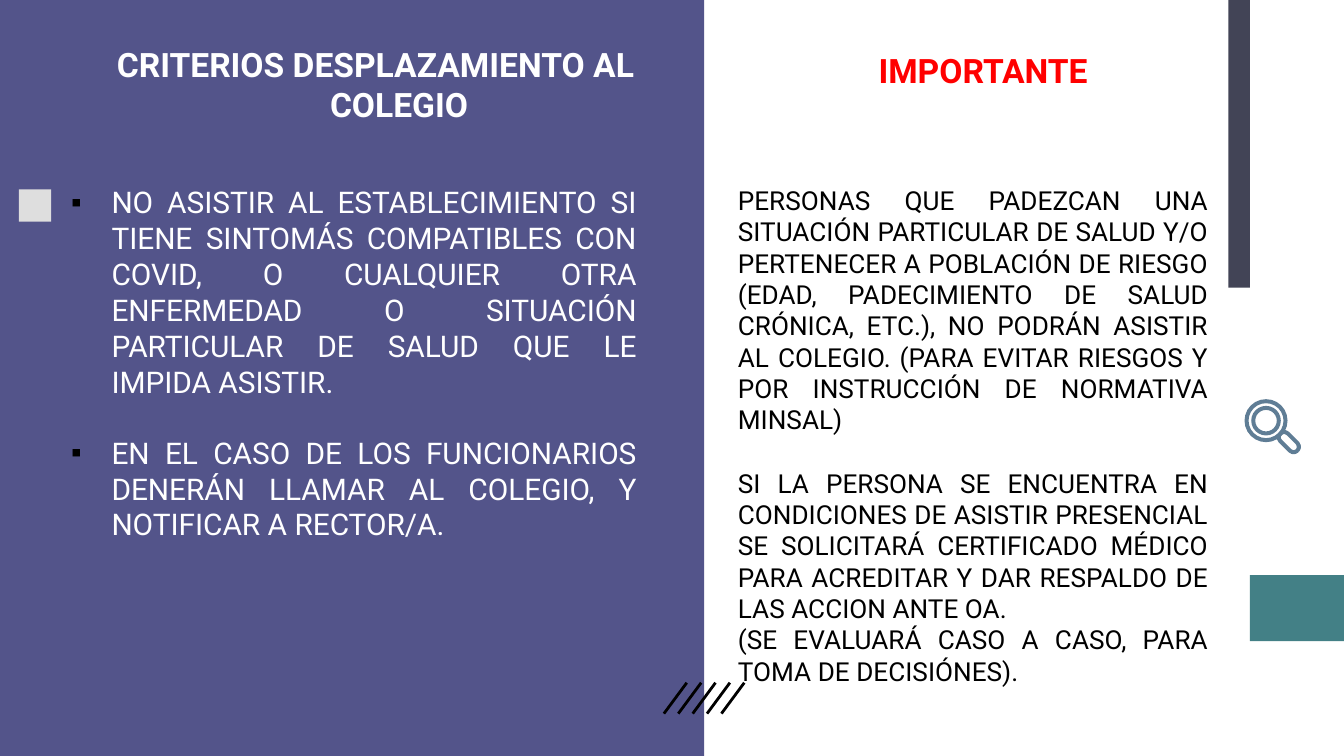
from lxml.etree import SubElement
from pptx import Presentation
from pptx.dml.color import RGBColor
from pptx.enum.shapes import MSO_CONNECTOR, MSO_SHAPE as SHAPE
from pptx.enum.text import MSO_ANCHOR as ANCHOR, MSO_AUTO_SIZE, PP_ALIGN as ALIGN
from pptx.oxml.ns import qn
from pptx.util import Inches, Pt

WIDTH = 10
HEIGHT = WIDTH * 9 / 16
FONT = "Roboto"
WHITE, BLACK, RED = "FFFFFF", "000000", "FF0000"
PURPLE, SLATE, TEAL, GRAY, STEEL = "53548A", "424456", "438086", "DEDEDE", "5F7D95"

CRITERIA = [
    "NO ASISTIR AL ESTABLECIMIENTO SI TIENE SINTOMÁS COMPATIBLES CON COVID, "
    "O CUALQUIER OTRA ENFERMEDAD O SITUACIÓN PARTICULAR DE SALUD QUE LE IMPIDA ASISTIR.",
    "EN EL CASO DE LOS FUNCIONARIOS DENERÁN LLAMAR AL COLEGIO, Y NOTIFICAR A RECTOR/A.",
]
IMPORTANT = [
    "PERSONAS QUE PADEZCAN UNA SITUACIÓN PARTICULAR DE SALUD Y/O PERTENECER A "
    "POBLACIÓN DE RIESGO (EDAD, PADECIMIENTO DE SALUD CRÓNICA, ETC.), NO PODRÁN "
    "ASISTIR AL COLEGIO. (PARA EVITAR RIESGOS Y POR INSTRUCCIÓN DE NORMATIVA MINSAL)",
    "SI LA PERSONA SE ENCUENTRA EN CONDICIONES DE ASISTIR PRESENCIAL SE SOLICITARÁ "
    "CERTIFICADO MÉDICO PARA ACREDITAR Y DAR RESPALDO DE LAS ACCION ANTE OA.",
    "(SE EVALUARÁ CASO A CASO, PARA TOMA DE DECISIÓNES).",
]


def rgb(value):
    return RGBColor.from_string(value)


def place(sp, x, y, w, h):
    """Position a shape and bring it to the front."""
    sp.left, sp.top, sp.width, sp.height = (Inches(v) for v in (x, y, w, h))
    sp.element.getparent().append(sp.element)


def set_bullet(p, char, color):
    pPr = p._p.get_or_add_pPr()
    if not char:
        SubElement(pPr, qn("a:buNone"))
        return
    clr = SubElement(pPr, qn("a:buClr"))
    SubElement(clr, qn("a:srgbClr"), val=color)
    SubElement(pPr, qn("a:buChar"), char=char)


def write(sp, paragraphs, size, color, bold=False, align=ALIGN.JUSTIFY,
          anchor=ANCHOR.TOP, inset=0.05, margin=0, indent=0, bullet=None, gaps=()):
    """Fill a shape with paragraphs; gaps gives points before each one."""
    tf = sp.text_frame
    tf.word_wrap = True
    tf.auto_size = MSO_AUTO_SIZE.NONE
    tf.vertical_anchor = anchor
    tf.margin_left = tf.margin_right = Inches(0.1)
    tf.margin_top = tf.margin_bottom = Inches(inset)
    for i, text in enumerate(paragraphs):
        p = tf.add_paragraph() if i else tf.paragraphs[0]
        p.alignment = align
        p.space_before = Pt(gaps[i] if gaps else 0)
        pPr = p._p.get_or_add_pPr()
        pPr.set("marL", str(Inches(margin)))
        pPr.set("indent", str(Inches(indent)))
        set_bullet(p, bullet, BLACK)
        r = p.add_run()
        r.text = text
        r.font.name, r.font.size, r.font.bold = FONT, Pt(size), bold
        r.font.color.rgb = rgb(color)


def add_heading(sp, text, color):
    write(sp, [text], 18, color, bold=True, align=ALIGN.CENTER,
          anchor=ANCHOR.MIDDLE, inset=0.1, margin=0.5, indent=-0.35)


def add_block(slide, kind, x, y, w, h, color):
    sp = slide.shapes.add_shape(kind, Inches(x), Inches(y), Inches(w), Inches(h))
    sp.shadow.inherit = False
    sp.fill.solid()
    sp.fill.fore_color.rgb = rgb(color)
    sp.line.fill.background()
    return sp


def add_hatch(slide, count=5, step=0.107):
    for i in range(count):
        x = 5.11 + i * step
        line = slide.shapes.add_connector(
            MSO_CONNECTOR.STRAIGHT, Inches(x), Inches(5.08), Inches(x - 0.17), Inches(5.31))
        line.line.color.rgb = rgb(BLACK)
        line.line.width = Pt(1.5)
        SubElement(line.element.spPr, qn("a:effectLst"))


def add_magnifier(slide, cx=9.42, cy=3.13, band=0.03):
    handle = add_block(slide, SHAPE.ROUNDED_RECTANGLE, cx + 0.08, cy + 0.12, 0.18, 0.08, STEEL)
    handle.adjustments[0] = 0.5
    handle.rotation = 45
    handle.fill.background()
    handle.line.color.rgb = rgb(STEEL)
    handle.line.width = Inches(band)
    for radius in (0.16, 0.11):
        ring = add_block(slide, SHAPE.DONUT, cx - radius, cy - radius,
                         2 * radius, 2 * radius, STEEL)
        ring.adjustments[0] = band / (2 * radius)


def main():
    prs = Presentation()
    prs.slide_width, prs.slide_height = Inches(WIDTH), Inches(HEIGHT)
    slide = prs.slides.add_slide(prs.slide_layouts[3])
    title, criteria, important = slide.placeholders

    for box, color in [((0, 0, 5.24, HEIGHT), PURPLE), ((9.14, 0, 0.16, 2.14), SLATE),
                       ((9.3, 4.28, 0.7, 0.49), TEAL), ((0.14, 1.41, 0.24, 0.24), GRAY)]:
        add_block(slide, SHAPE.RECTANGLE, *box, color)
    add_hatch(slide)

    place(title, 0.51, 0.21, 4.42, 0.83)
    add_heading(title, "CRITERIOS DESPLAZAMIENTO AL COLEGIO", WHITE)
    place(criteria, 0.43, 1.32, 4.41, 2.52)
    write(criteria, CRITERIA, 16, WHITE, margin=0.3, indent=-0.3, bullet="▪", gaps=(0, 19))
    place(important, 5.39, 1.32, 3.7, 3.86)
    write(important, IMPORTANT, 14, BLACK, gaps=(0, 17, 0))

    heading = slide.shapes.add_textbox(0, 0, 0, 0)
    place(heading, 5.47, 0.21, 3.54, 0.63)
    add_heading(heading, "IMPORTANTE", RED)
    add_magnifier(slide)
    prs.save("out.pptx")


if __name__ == "__main__":
    main()
